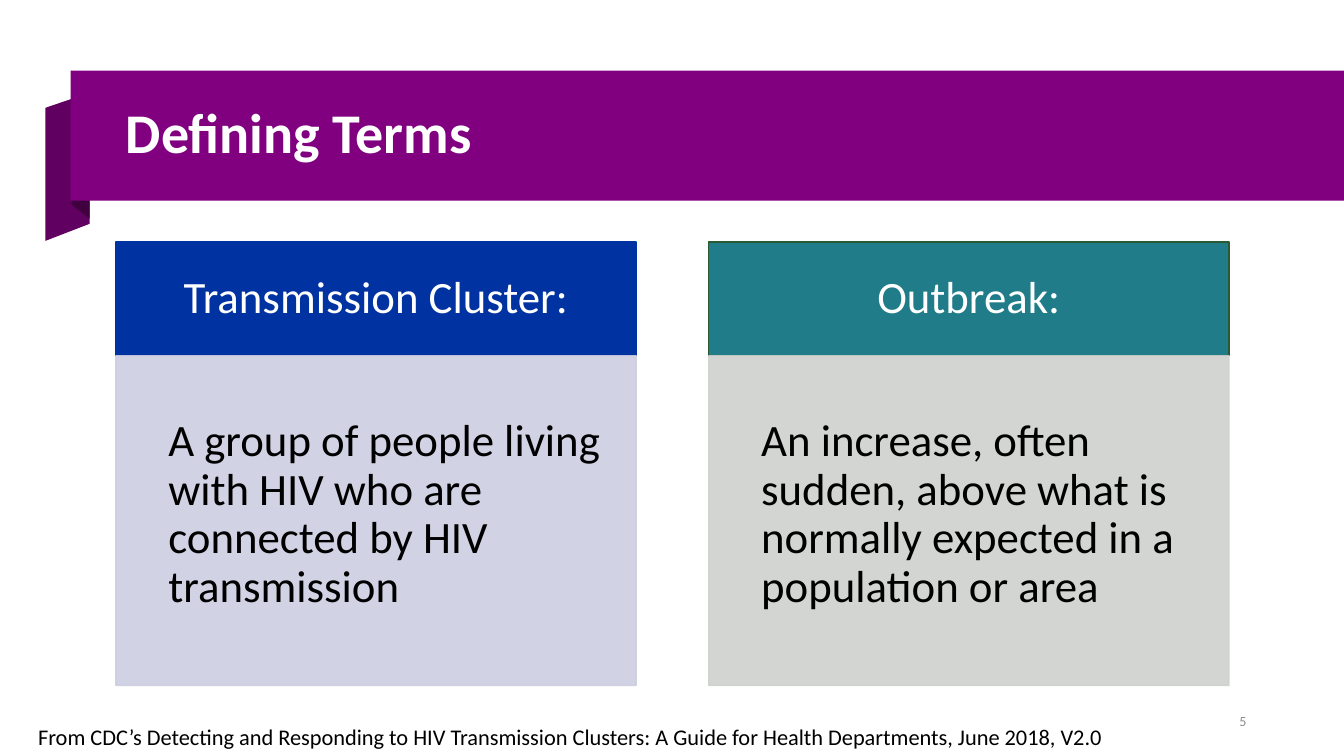
from lxml import etree
from pptx import Presentation
from pptx.dml.color import RGBColor
from pptx.enum.shapes import MSO_SHAPE
from pptx.enum.text import MSO_ANCHOR, PP_ALIGN
from pptx.oxml.ns import qn
from pptx.util import Inches, Pt

RECT = MSO_SHAPE.RECTANGLE
TOP, MIDDLE = MSO_ANCHOR.TOP, MSO_ANCHOR.MIDDLE
LEFT, CENTER, RIGHT = PP_ALIGN.LEFT, PP_ALIGN.CENTER, PP_ALIGN.RIGHT

TITLE = "Defining Terms"
PAGE = "5"
SOURCE = ("From CDC’s Detecting and Responding to HIV Transmission Clusters: "
          "A Guide for Health Departments, June 2018, V2.0")
# term, definition, header fill, header line, body fill
TERMS = [
    ("Transmission Cluster:",
     "A group of people living with HIV who are connected by HIV transmission",
     "blue", "blue", "lavender"),
    ("Outbreak:",
     "An increase, often sudden, above what is normally expected in a population or area",
     "teal", "green", "sage"),
]
COLORS = {
    "white": "FFFFFF", "black": "000000", "grey": "8C8C8C",
    "purple": "800080", "fold": "600060", "shade": "400040",
    "blue": "0033A1", "teal": "207C88", "green": "2A5934",
    "lavender": "CCCEE0", "sage": "CED1CE",
}
WIDTH, HEIGHT = 13.33, 7.5
BANNER_LEFT, BANNER_TOP, BANNER_HEIGHT = 0.7, 0.7, 1.29
RIBBON = [
    ("fold", [(0.89, 2.22), (0.45, 2.39), (0.45, 1.07), (0.89, 0.92)]),
    ("shade", [(0.89, 2.17), (0.71, 2.03), (0.71, 0.7), (0.89, 0.85)]),
]
MARGIN, COLUMN, GUTTER = 1.15, 5.16, 0.72
HEAD_TOP, HEAD_HEIGHT, BODY_HEIGHT = 2.4, 1.13, 3.27
HEAD_INSETS = (0.28, 0.16, 0.28, 0.16)
BODY_INSETS = (0.52, 0.21, 0.28, 0.32)
BOX_INSETS = (0.1, 0.05, 0.1, 0.05)


def rgb(name):
    return RGBColor.from_string(COLORS[name])


def paint(shape, fill, line=None, opacity=100):
    shape.shadow.inherit = False
    shape.fill.solid()
    shape.fill.fore_color.rgb = rgb(fill)
    if line:
        shape.line.color.rgb = rgb(line)
        shape.line.width = Pt(1)
    else:
        shape.line.fill.background()
    if opacity < 100:
        for color in shape._element.spPr.iter(qn("a:srgbClr")):
            etree.SubElement(color, qn("a:alpha"), val=str(opacity * 1000))


def write(shape, text, size, color, insets=BOX_INSETS, align=LEFT,
          anchor=MIDDLE, spacing=1.0, bold=False):
    tf = shape.text_frame
    margins = zip(("left", "top", "right", "bottom"), insets)
    frame = {f"margin_{side}": Inches(v) for side, v in margins}
    frame.update(word_wrap=True, vertical_anchor=anchor)
    p = tf.paragraphs[0]
    r = p.add_run()
    r.text = text
    for target, values in (
        (tf, frame),
        (p, {"alignment": align, "line_spacing": spacing}),
        (r.font, {"name": "Calibri", "size": Pt(size), "bold": bold}),
    ):
        for key, value in values.items():
            setattr(target, key, value)
    r.font.color.rgb = rgb(color)


def add_rect(s, *box):
    return s.shapes.add_shape(RECT, *map(Inches, box))


def add_text(s, box, *args, **formats):
    write(s.shapes.add_textbox(*map(Inches, box)), *args, **formats)


def add_banner(s):
    for color, points in RIBBON:
        start, *rest = [(Inches(x), Inches(y)) for x, y in points]
        outline = s.shapes.build_freeform(*start)
        outline.add_line_segments(rest, close=True)
        paint(outline.convert_to_shape(), color)
    paint(add_rect(s, BANNER_LEFT, BANNER_TOP, WIDTH - BANNER_LEFT, BANNER_HEIGHT), "purple")
    add_text(s, (MARGIN, 0.86, 11.27, 0.96), TITLE, 40, "white", spacing=0.9, bold=True)


def add_terms(s):
    for i, (term, definition, fill, line, body_fill) in enumerate(TERMS):
        x = MARGIN + i * (COLUMN + GUTTER)
        head = add_rect(s, x, HEAD_TOP, COLUMN, HEAD_HEIGHT)
        paint(head, fill, line)
        write(head, term, 32, "white", HEAD_INSETS, CENTER, spacing=0.9)
        body = add_rect(s, x, HEAD_TOP + HEAD_HEIGHT, COLUMN, BODY_HEIGHT)
        paint(body, body_fill, body_fill, opacity=90)
        write(body, definition, 32, "black", BODY_INSETS, spacing=0.9)


def main():
    prs = Presentation()
    prs.slide_width, prs.slide_height = Inches(WIDTH), Inches(HEIGHT)
    s = prs.slides.add_slide(prs.slide_layouts[6])
    add_banner(s)
    add_text(s, (11.71, 6.98, 0.75, 0.35), PAGE, 10, "grey", align=RIGHT)
    add_terms(s)
    add_text(s, (0.28, 7.12, 11.44, 0.37), SOURCE, 16, "black", anchor=TOP)
    prs.save("out.pptx")


if __name__ == "__main__":
    main()
